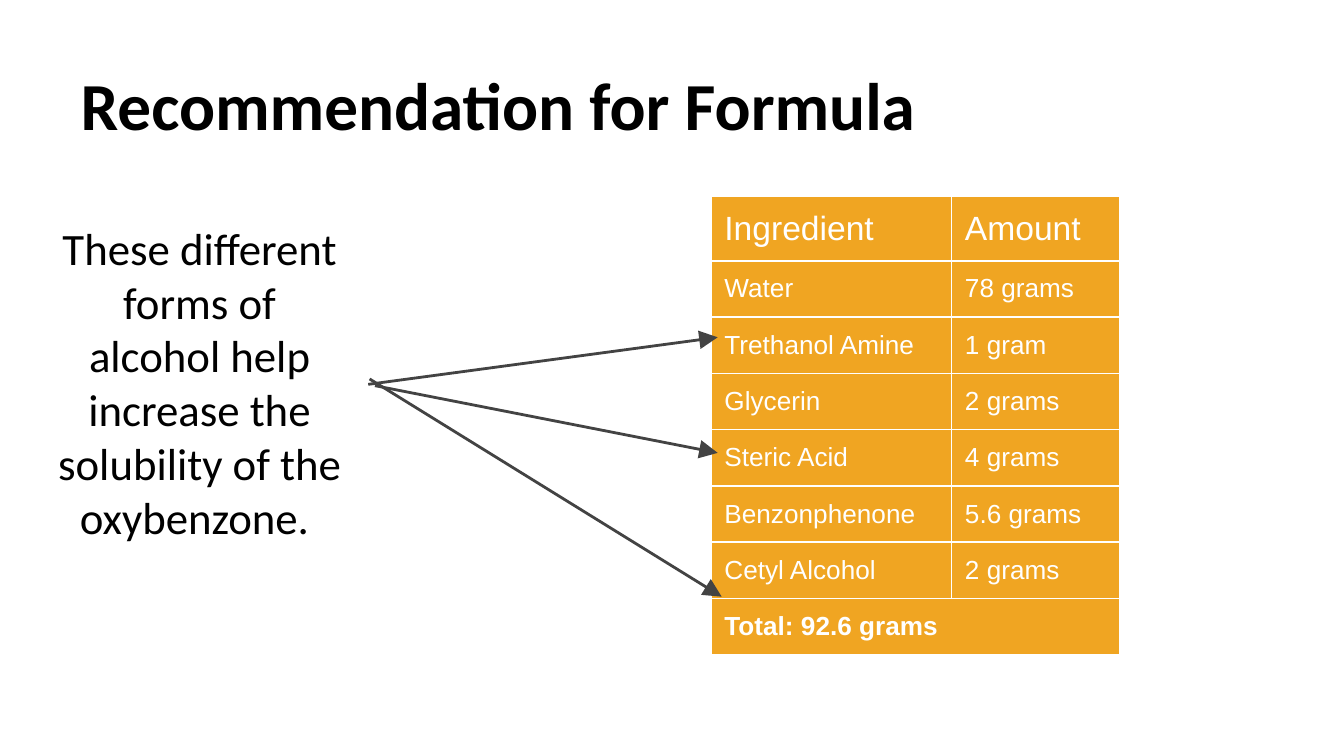
from lxml.etree import SubElement
from pptx import Presentation
from pptx.dml.color import RGBColor
from pptx.enum.shapes import MSO_CONNECTOR as Connector
from pptx.enum.text import MSO_ANCHOR as Anchor, PP_ALIGN as Align
from pptx.oxml.ns import qn
from pptx.util import Inches, Pt

BLACK = RGBColor(0x00, 0x00, 0x00)
WHITE = RGBColor(0xFF, 0xFF, 0xFF)
GRAY = RGBColor(0x43, 0x43, 0x43)
ORANGE = RGBColor(0xF0, 0xA5, 0x22)

INGREDIENTS = [
    ("Ingredient", "Amount"),
    ("Water", "78 grams"),
    ("Trethanol Amine", "1 gram"),
    ("Glycerin", "2 grams"),
    ("Steric Acid", "4 grams"),
    ("Benzonphenone", "5.6 grams"),
    ("Cetyl Alcohol", "2 grams"),
    ("Total: 92.6 grams", ""),
]
ARROWS = [
    ((2.74, 2.86), (5.34, 2.51)),
    ((2.79, 2.87), (5.34, 3.37)),
    ((2.75, 2.82), (5.37, 4.44)),
]


def write(frame, text, size=14, font="Arial", color=BLACK, bold=False, align=Align.LEFT):
    para = frame.paragraphs[0]
    para.alignment = align
    span = para.add_run()
    span.text = text
    span.font.size = Pt(size)
    span.font.name = font
    span.font.color.rgb = color
    span.font.bold = bold


class SlideBuilder:
    heading_font = "Calibri"
    margin = Inches(0.1)

    def __init__(self, page):
        self.page = page

    def inset(self, box):
        box.margin_left = box.margin_right = self.margin
        box.margin_top = box.margin_bottom = self.margin

    def title(self, text, left, top, width, height):
        box = self.page.shapes.title
        box.left, box.top = Inches(left), Inches(top)
        box.width, box.height = Inches(width), Inches(height)
        frame = box.text_frame
        self.inset(frame)
        frame.vertical_anchor = Anchor.BOTTOM
        write(frame, text, size=36, font=self.heading_font, bold=True)

    def note(self, text, left, top, width, height):
        box = self.page.shapes.add_textbox(
            Inches(left), Inches(top), Inches(width), Inches(height))
        frame = box.text_frame
        frame.word_wrap = True
        self.inset(frame)
        write(frame, text, size=24, font=self.heading_font, align=Align.CENTER)

    def arrow(self, start, end):
        arrow = self.page.shapes.add_connector(
            Connector.STRAIGHT, *map(Inches, start + end))
        arrow.line.color.rgb = GRAY
        arrow.line.width = Pt(1.5)
        props = arrow._element.spPr
        SubElement(props.find(qn("a:ln")), qn("a:tailEnd"),
                   type="triangle", w="lg", len="lg")
        SubElement(props, qn("a:effectLst"))

    def border(self, cell):
        props = cell._tc.get_or_add_tcPr()
        for side in ("a:lnL", "a:lnR", "a:lnT", "a:lnB"):
            edge = SubElement(props, qn(side), w=str(Pt(1)))
            fill = SubElement(edge, qn("a:solidFill"))
            SubElement(fill, qn("a:srgbClr"), val=str(WHITE))

    def table(self, rows, left, top, widths, heights):
        grid = self.page.shapes.add_table(
            len(rows), len(widths), Inches(left), Inches(top),
            Inches(sum(widths)), Inches(sum(heights))).table
        grid.horz_banding = False
        for column, width in zip(grid.columns, widths):
            column.width = Inches(width)
        last = len(rows) - 1
        for index, (values, height) in enumerate(zip(rows, heights)):
            grid.rows[index].height = Inches(height)
            for cell, value in zip(grid.rows[index].cells, values):
                self.inset(cell)
                self.border(cell)
                cell.fill.solid()
                cell.fill.fore_color.rgb = ORANGE
                if value:
                    write(cell.text_frame, value, size=14 if index else 18,
                          color=WHITE, bold=index == last)
        grid.cell(last, 0).merge(grid.cell(last, len(widths) - 1))


def main():
    deck = Presentation()
    deck.slide_width = Inches(10)
    deck.slide_height = deck.slide_width * 9 // 16
    slide = SlideBuilder(deck.slides.add_slide(deck.slide_layouts[5]))
    slide.title("Recommendation for Formula", 0.5, 0.23, 9, 0.94)
    slide.table(INGREDIENTS, 5.29, 1.46, [1.79, 1.25], [0.41] + [0.31] * 7)
    for start, end in ARROWS:
        slide.arrow(start, end)
    slide.note("These different forms of alcohol help increase the solubility "
               "of the oxybenzone. ", 0.31, 1.54, 2.35, 1.41)
    deck.save("out.pptx")


if __name__ == "__main__":
    main()
